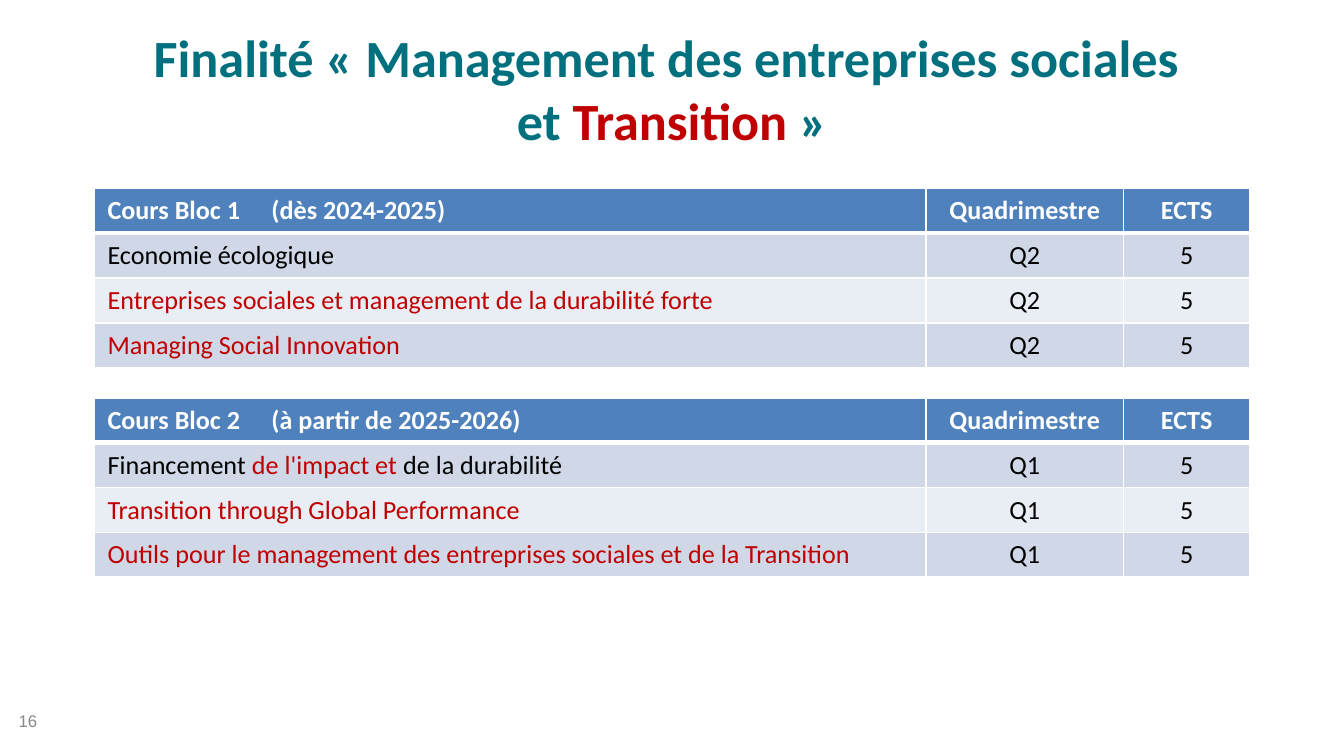
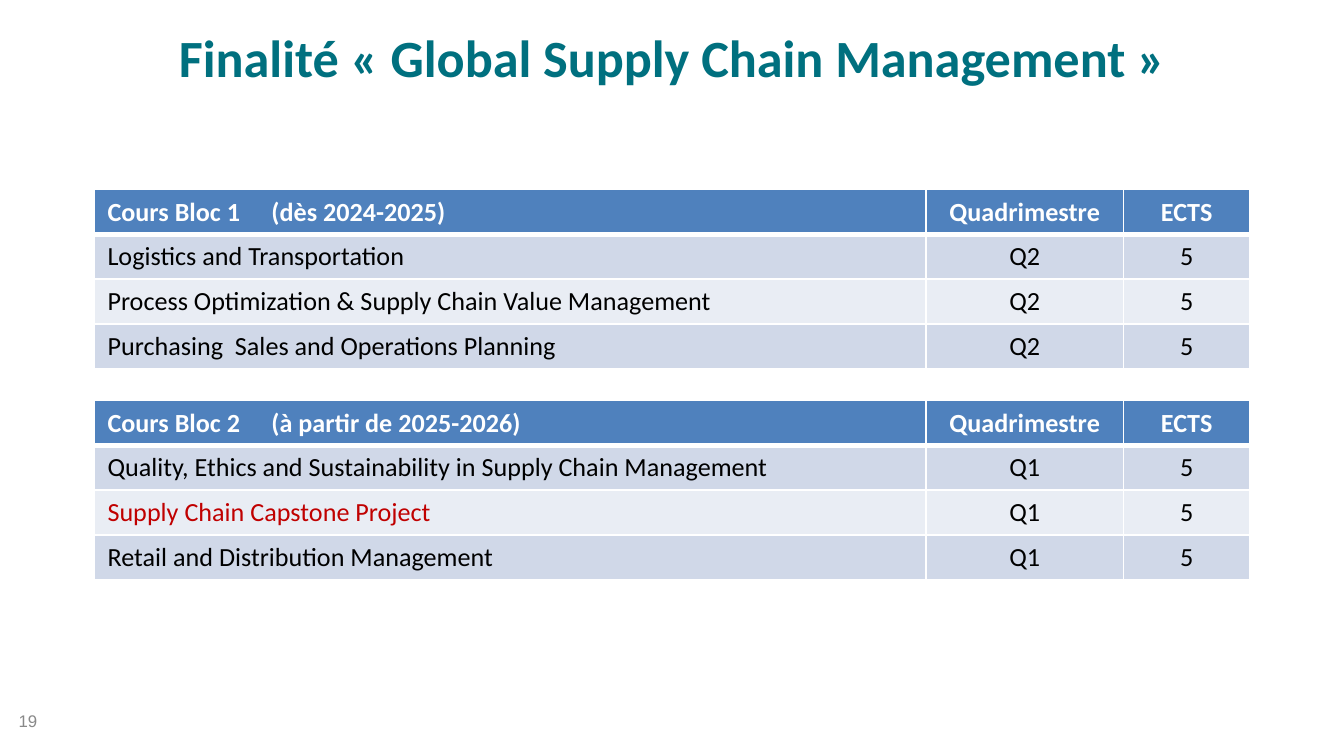
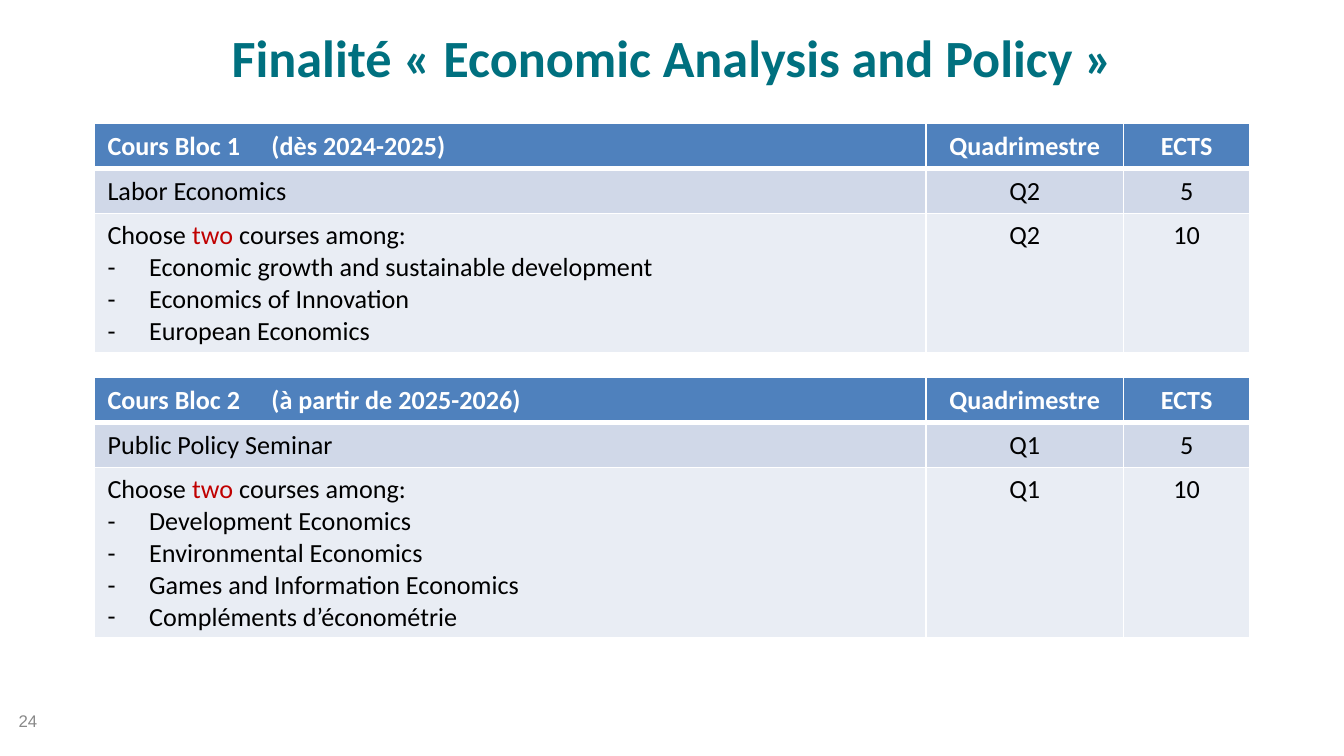
"""Build three slides listing the courses of each master's specialisation."""
from lxml import etree
from pptx import Presentation
from pptx.dml.color import RGBColor
from pptx.enum.text import MSO_ANCHOR, MSO_AUTO_SIZE, PP_ALIGN
from pptx.oxml.ns import qn
from pptx.util import Inches, Pt

COLORS = {
    "title": "00707F", "accent": "C00000", "text": "000000", "number": "898989",
    "header": "4F81BD", "line": "FFFFFF", "odd": "D0D8E8", "even": "E9EDF4",
}
FONT = "Calibri"
MARK = "*"
BULLET = "- "
HEADERS = {
    "Q2": ("Cours Bloc 1\t(dès 2024-2025)", "Quadrimestre", "ECTS"),
    "Q1": ("Cours Bloc 2\t(à partir de 2025-2026)", "Quadrimestre", "ECTS"),
}
PROGRAMS = [
    {
        "number": 16,
        "title": "Finalité « Management des entreprises sociales \vet *Transition* »",
        "blocks": [
            ("Q2", 1.4, [
                ("Economie écologique", 5),
                ("*Entreprises sociales et management de la durabilité forte*", 5),
                ("*Managing Social Innovation*", 5),
            ]),
            ("Q1", 2.96, [
                ("Financement *de l'impact et *de la durabilité", 5),
                ("*Transition through Global Performance*", 5),
                ("*Outils pour le management des entreprises sociales et de la Transition*", 5),
            ]),
        ],
    },
    {
        "number": 19,
        "title": "Finalité « Global Supply Chain Management »",
        "blocks": [
            ("Q2", 1.41, [
                ("Logistics and Transportation", 5),
                ("Process Optimization & Supply Chain Value Management", 5),
                ("Purchasing  Sales and Operations Planning", 5),
            ]),
            ("Q1", 2.98, [
                ("Quality, Ethics and Sustainability in Supply Chain Management", 5),
                ("*Supply Chain Capstone Project*", 5),
                ("Retail and Distribution Management", 5),
            ]),
        ],
    },
    {
        "number": 24,
        "title": "Finalité « Economic Analysis and Policy »",
        "blocks": [
            ("Q2", 0.92, [
                ("Labor Economics", 5),
                ("Choose *two* courses among:\n- Economic growth and sustainable development\n"
                 "- Economics of Innovation\n- European Economics", 10),
            ]),
            ("Q1", 2.81, [
                ("Public Policy Seminar", 5),
                ("Choose* two *courses among:\n- Development Economics\n- Environmental Economics\n"
                 "- Games and Information Economics\n- Compléments d’économétrie", 10),
            ]),
        ],
    },
]

SLIDE_SIZE = (10, 10 * 9 / 16)
TABLE_LEFT = 0.7
COLUMNS = (6.19, 1.47, 0.94)
LINE_HEIGHT, CELL_PADDING = 0.23, 0.1
HEADER_TAB, BULLET_INDENT = 1.22, 0.31
THIN, THICK = 1, 3


def rgb(name):
    return RGBColor.from_string(COLORS[name])


def style_font(font, size, color, bold=False, face=FONT):
    font.name, font.size, font.bold = face, Pt(size), bold
    font.color.rgb = rgb(color)


def write_marked(paragraph, text, size, color, bold=False):
    for index, piece in enumerate(text.split(MARK)):
        for part, words in enumerate(piece.split("\v")):
            if part:
                paragraph.add_line_break()
            if words:
                run = paragraph.add_run()
                run.text = words
                style_font(run.font, size, "accent" if index % 2 else color, bold)


def add_tab(paragraph):
    tabs = etree.SubElement(paragraph._p.get_or_add_pPr(), qn("a:tabLst"))
    etree.SubElement(tabs, qn("a:tab"), pos=str(Inches(HEADER_TAB)), algn="l")


def add_bullet(paragraph):
    properties = paragraph._p.get_or_add_pPr()
    properties.set("marL", str(Inches(BULLET_INDENT)))
    properties.set("indent", str(-Inches(BULLET_INDENT)))
    etree.SubElement(properties, qn("a:buFont"), typeface=FONT)
    etree.SubElement(properties, qn("a:buChar"), char=BULLET.strip())


def add_borders(cell, top, bottom):
    properties = cell._tc.get_or_add_tcPr()
    for side, width in (("L", THIN), ("R", THIN), ("T", top), ("B", bottom)):
        line = etree.SubElement(properties, qn(f"a:ln{side}"), w=str(Pt(width)))
        fill = etree.SubElement(line, qn("a:solidFill"))
        etree.SubElement(fill, qn("a:srgbClr"), val=COLORS["line"])


def fill_cell(cell, text, row, column):
    header = row == 0
    add_borders(cell, THICK if row == 1 else THIN, THICK if header else THIN)
    cell.fill.solid()
    cell.fill.fore_color.rgb = rgb("header" if header else "odd" if row % 2 else "even")
    for index, line in enumerate(text.split("\n")):
        frame = cell.text_frame
        paragraph = frame.add_paragraph() if index else frame.paragraphs[0]
        if column:
            paragraph.alignment = PP_ALIGN.CENTER
        if "\t" in line:
            add_tab(paragraph)
        if line.startswith(BULLET):
            add_bullet(paragraph)
        write_marked(paragraph, line.removeprefix(BULLET), 14, "line" if header else "text", header)


def add_block(slide, term, top, courses):
    rows = [HEADERS[term]] + [(course, term, str(credits)) for course, credits in courses]
    heights = [CELL_PADDING + LINE_HEIGHT * len(row[0].split("\n")) for row in rows]
    table = slide.shapes.add_table(
        len(rows), len(COLUMNS), Inches(TABLE_LEFT), Inches(top),
        Inches(sum(COLUMNS)), Inches(sum(heights))).table
    for column, width in zip(table.columns, COLUMNS):
        column.width = Inches(width)
    for r, (row, height) in enumerate(zip(rows, heights)):
        table.rows[r].height = Inches(height)
        for c, text in enumerate(row):
            fill_cell(table.cell(r, c), text, r, c)


def set_title(slide, text):
    title = slide.shapes.title
    title.left, title.top, title.width, title.height = map(Inches, (0.5, 0.14, 9, 0.62))
    frame = title.text_frame
    frame.word_wrap, frame.auto_size = True, MSO_AUTO_SIZE.NONE
    frame.vertical_anchor = MSO_ANCHOR.TOP
    frame.paragraphs[0].alignment = PP_ALIGN.CENTER
    write_marked(frame.paragraphs[0], text, 28, "title", True)


def add_number(slide, number):
    frame = slide.shapes.add_textbox(*map(Inches, (0.04, 5.21, 2.33, 0.3))).text_frame
    frame.word_wrap, frame.vertical_anchor = True, MSO_ANCHOR.MIDDLE
    frame.text = str(number)
    style_font(frame.paragraphs[0].runs[0].font, 9, "number", face="Arial")


def main():
    deck = Presentation()
    deck.slide_width, deck.slide_height = map(Inches, SLIDE_SIZE)
    for program in PROGRAMS:
        slide = deck.slides.add_slide(deck.slide_layouts[5])
        add_number(slide, program["number"])
        set_title(slide, program["title"])
        for block in program["blocks"]:
            add_block(slide, *block)
    deck.save("out.pptx")


if __name__ == "__main__":
    main()
